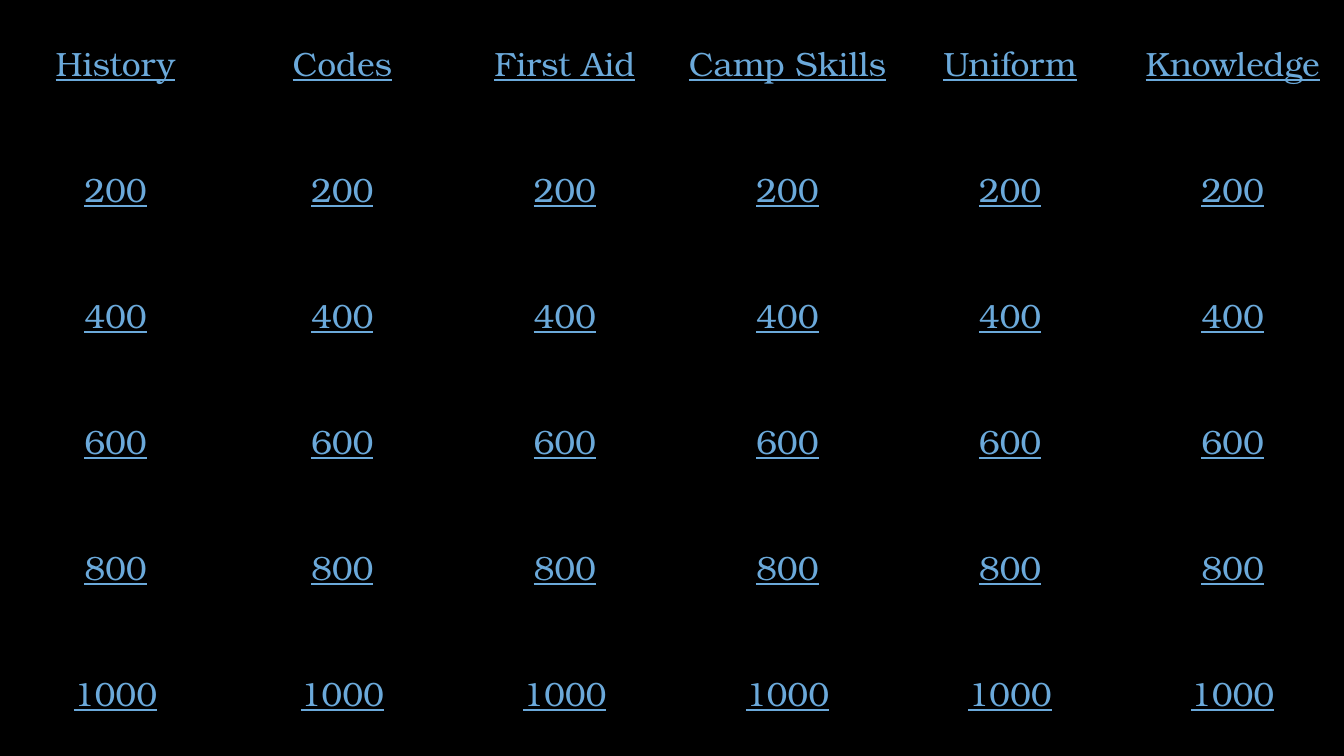
from lxml.etree import SubElement
from pptx import Presentation
from pptx.dml.color import RGBColor
from pptx.enum.text import MSO_ANCHOR as Anchor, PP_ALIGN as Align
from pptx.oxml.ns import qn
from pptx.util import Pt

CATEGORIES = ["History", "Codes", "First Aid", "Camp Skills", "Uniform", "Knowledge"]
POINTS = [200, 400, 600, 800, 1000]
COLORS = {"board": "000000", "link": "6BA9DA"}
FONT = "TeX Gyre Bonum"
WIDTH, HEIGHT = 960, 540
FIRST_COLUMN = 165

board_rows = [CATEGORIES] + [[str(value)] * len(CATEGORIES) for value in POINTS]
other_column = (WIDTH - FIRST_COLUMN) / (len(CATEGORIES) - 1)
row_height = HEIGHT / len(board_rows)


def color(name):
    return RGBColor.from_string(COLORS[name])


def fill_cell(cell, label):
    properties = cell._tc.get_or_add_tcPr()
    for side in ("a:lnL", "a:lnR", "a:lnT", "a:lnB"):
        SubElement(SubElement(properties, qn(side)), qn("a:noFill"))
    cell.fill.solid()
    cell.fill.fore_color.rgb = color("board")
    cell.vertical_anchor = Anchor.MIDDLE
    paragraph = cell.text_frame.paragraphs[0]
    paragraph.alignment = Align.CENTER
    run = paragraph.add_run()
    run.text = label
    run.font.name = FONT
    run.font.size = Pt(24)
    run.font.bold = False
    run.font.underline = True
    run.font.color.rgb = color("link")


def main():
    deck = Presentation()
    deck.slide_width, deck.slide_height = Pt(WIDTH), Pt(HEIGHT)
    slide = deck.slides.add_slide(deck.slide_layouts[6])
    slide.background.fill.solid()
    slide.background.fill.fore_color.rgb = color("board")

    board = slide.shapes.add_table(
        len(board_rows), len(CATEGORIES), Pt(0), Pt(0), Pt(WIDTH), Pt(HEIGHT)
    ).table
    board.first_row = board.horz_banding = False
    for index, column in enumerate(board.columns):
        column.width = Pt(other_column if index else FIRST_COLUMN)
    for row, labels in zip(board.rows, board_rows):
        row.height = Pt(row_height)
        for cell, label in zip(row.cells, labels):
            fill_cell(cell, label)

    deck.save("out.pptx")


if __name__ == "__main__":
    main()
